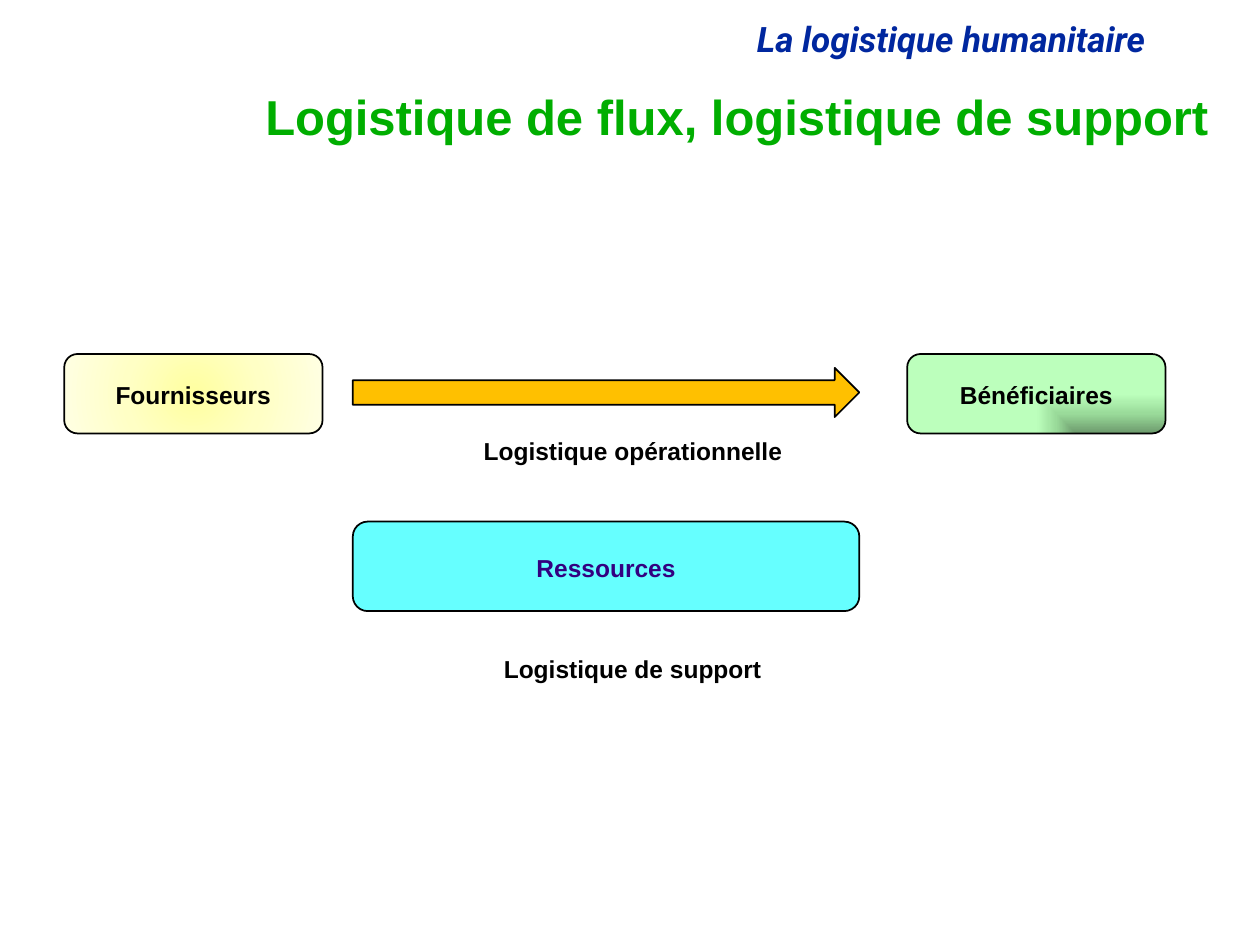
from dataclasses import dataclass
from typing import Optional

from lxml.etree import SubElement
from pptx import Presentation
from pptx.dml.color import RGBColor
from pptx.enum.shapes import MSO_SHAPE
from pptx.enum.text import MSO_ANCHOR, PP_ALIGN
from pptx.oxml.ns import qn
from pptx.util import Inches, Pt

WIDTH, HEIGHT = Inches(10), Inches(7.5)
COLOURS = {
    "black": "000000", "navy": "00279F", "green": "00AE00", "violet": "330080",
    "amber": "FFC000", "cyan": "66FFFF",
    "yellow": "FFFFA0", "pale yellow": "FFFFC5", "cream": "FFFFE3",
    "moss": "6C9A6C", "sage": "9ADB9A", "mint": "BCFFBC",
}


@dataclass(frozen=True)
class Area:
    """A rectangle in percent of the slide's width and height."""
    left: float
    top: float
    width: float
    height: float

    def lengths(self) -> tuple[int, int, int, int]:
        return (int(WIDTH * self.left / 100), int(HEIGHT * self.top / 100),
                int(WIDTH * self.width / 100), int(HEIGHT * self.height / 100))


@dataclass(frozen=True)
class Gradient:
    """Three evenly spaced colours spreading from a focus in percent."""
    colours: tuple[str, str, str]
    outline: str
    focus: dict[str, int]


@dataclass(frozen=True)
class Label:
    text: str
    colour: str = "black"
    size: int = 14
    font: str = "Arial"
    italic: bool = False
    align: PP_ALIGN = PP_ALIGN.LEFT
    anchor: MSO_ANCHOR = MSO_ANCHOR.TOP
    wrap: bool = False
    bottom: float = 0.05


@dataclass(frozen=True)
class Block:
    area: Area
    fill: str | Gradient
    label: Optional[Label] = None
    kind: MSO_SHAPE = MSO_SHAPE.ROUNDED_RECTANGLE


def rgb(name: str) -> RGBColor:
    return RGBColor.from_string(COLOURS[name])


def set_all(target, values: dict) -> None:
    for name, value in values.items():
        setattr(target, name, value)


def write(box, label: Label) -> None:
    frame = box.text_frame
    set_all(frame, {
        "word_wrap": label.wrap, "vertical_anchor": label.anchor,
        "margin_left": Inches(0.1), "margin_right": Inches(0.1),
        "margin_top": Inches(0.05), "margin_bottom": Inches(label.bottom),
    })
    para = frame.paragraphs[0]
    set_all(para, {"alignment": label.align, "line_spacing": 0.9})
    span = para.add_run()
    span.text = label.text
    set_all(span.font, {"name": label.font, "size": Pt(label.size),
                        "bold": True, "italic": label.italic})
    span.font.color.rgb = rgb(label.colour)


def spread(box, gradient: Gradient) -> None:
    """Turn the box's fill into a gradient that follows a path."""
    box.fill.gradient()
    fill = box._element.spPr.find(qn("a:gradFill"))
    for child in list(fill):
        fill.remove(child)
    stops = SubElement(fill, qn("a:gsLst"))
    for index, name in enumerate(gradient.colours):
        stop = SubElement(stops, qn("a:gs"), pos=str(index * 50000))
        SubElement(stop, qn("a:srgbClr"), val=COLOURS[name])
    route = SubElement(fill, qn("a:path"), {"path": gradient.outline})
    focus = {side: str(share * 1000) for side, share in gradient.focus.items()}
    SubElement(route, qn("a:fillToRect"), focus)


def draw_block(page, block: Block) -> None:
    box = page.shapes.add_shape(block.kind, *block.area.lengths())
    box.shadow.inherit = False
    if isinstance(block.fill, Gradient):
        spread(box, block.fill)
    else:
        box.fill.solid()
        box.fill.fore_color.rgb = rgb(block.fill)
    box.line.color.rgb = rgb("black")
    box.line.width = Pt(1)
    if block.label:
        write(box, block.label)


def draw_text(page, area: Area, label: Label) -> None:
    write(page.shapes.add_textbox(*area.lengths()), label)


def centred(text: str, colour: str = "black") -> Label:
    return Label(text, colour, align=PP_ALIGN.CENTER,
                 anchor=MSO_ANCHOR.MIDDLE, bottom=0)


# Shared columns and rows of the diagram, in percent
MIDDLE_LEFT, MIDDLE_WIDTH = 28, 40.2
END_TOP, END_WIDTH, END_HEIGHT = 37.47, 20.5, 8.4

GLOW = Gradient(("yellow", "pale yellow", "cream"), "circle",
                {"l": 50, "t": 50, "r": 50, "b": 50})
CORNER = Gradient(("moss", "sage", "mint"), "rect",
                  {"l": 100, "t": 100, "r": 0, "b": 0})

BLOCKS = [
    Block(Area(5.1, END_TOP, END_WIDTH, END_HEIGHT), GLOW, centred("Fournisseurs")),
    Block(Area(MIDDLE_LEFT, 38.93, MIDDLE_WIDTH, 5.2), "amber",
          kind=MSO_SHAPE.RIGHT_ARROW),
    Block(Area(72, END_TOP, END_WIDTH, END_HEIGHT), CORNER, centred("Bénéficiaires")),
    Block(Area(MIDDLE_LEFT, 55.2, MIDDLE_WIDTH, 9.47), "cyan",
          centred("Ressources", "violet")),
]
TEXTS = [
    # Headings
    (Area(59.1, 1.73, 40.6, 5.33),
     Label("La logistique humanitaire", "navy", 20, "Roboto", italic=True, wrap=True)),
    (Area(13.8, 9.33, 83.1, 6.67),
     Label("Logistique de flux, logistique de support", "green", 28,
           align=PP_ALIGN.RIGHT, anchor=MSO_ANCHOR.MIDDLE, wrap=True)),
    # Captions
    (Area(37.4, 45.87, 25.8, 4.13), Label("Logistique opérationnelle")),
    (Area(39, 68.93, 22.5, 4.13), Label("Logistique de support")),
]


def main() -> None:
    deck = Presentation()
    set_all(deck, {"slide_width": WIDTH, "slide_height": HEIGHT})
    page = deck.slides.add_slide(deck.slide_layouts[6])
    for block in BLOCKS:
        draw_block(page, block)
    for area, label in TEXTS:
        draw_text(page, area, label)
    deck.save("out.pptx")


if __name__ == "__main__":
    main()
